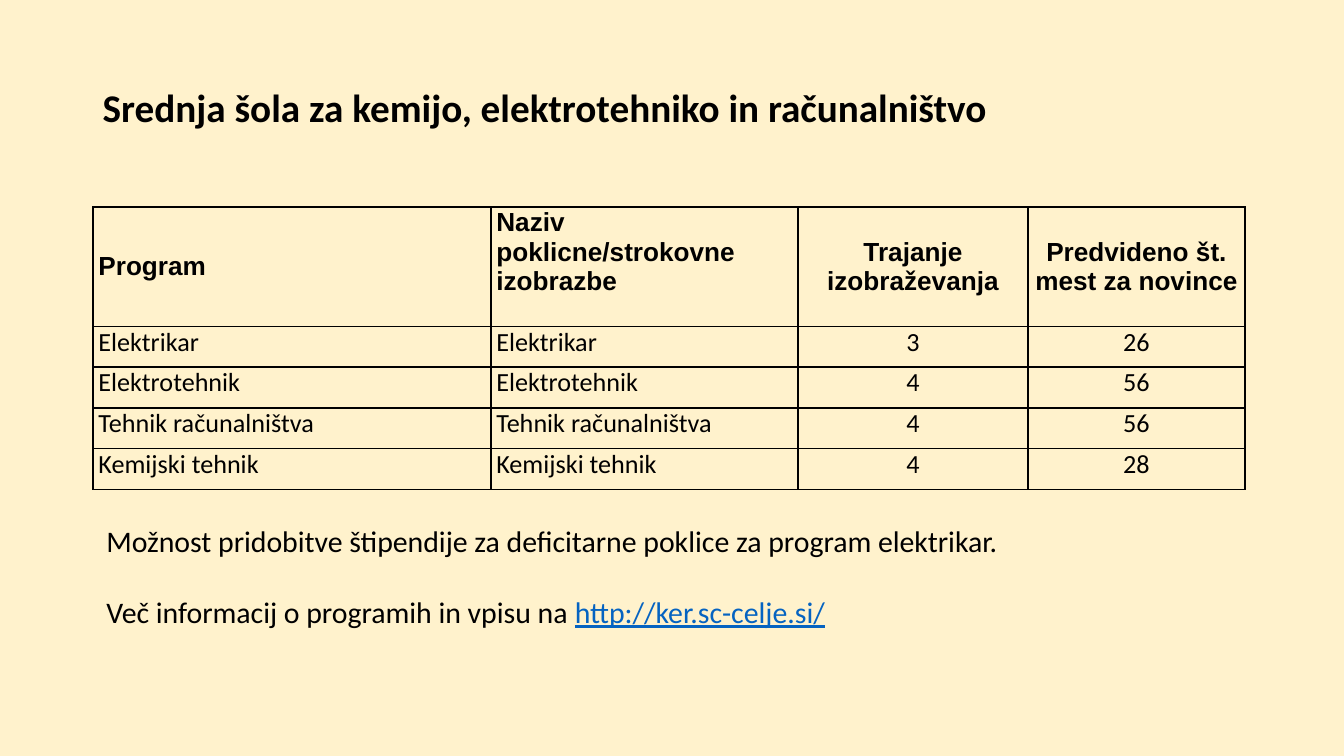
from pptx import Presentation
from pptx.dml.color import RGBColor as Rgb
from pptx.enum.text import MSO_ANCHOR as Anchor, MSO_AUTO_SIZE as Auto, PP_ALIGN as Align
from pptx.oxml import parse_xml
from pptx.oxml.ns import nsdecls
from pptx.util import Cm, Pt

COLORS = {"back": "FFF2CC", "text": "000000", "link": "0563C1"}
LEFT = 1.76
COLS = [7.52, 5.8, 4.35, 4.1]
HEAD, ROW = 2.26, 0.77
ROWS = [
    ["Program", "Naziv poklicne/strokovne izobrazbe",
     "Trajanje izobraževanja", "Predvideno št. mest za novince"],
    ["Elektrikar", "Elektrikar", "3", "26"],
    ["Elektrotehnik", "Elektrotehnik", "4", "56"],
    ["Tehnik računalništva", "Tehnik računalništva", "4", "56"],
    ["Kemijski tehnik", "Kemijski tehnik", "4", "28"],
]


def add_run(para, text, size, font="Calibri", bold=False, color="text"):
    run = para.add_run()
    run.text = text
    run.font.name = font
    run.font.size = Pt(size)
    run.font.bold = bold
    run.font.color.rgb = Rgb.from_string(COLORS[color])
    return run


def set_pads(item, side, top, bottom):
    item.margin_left = item.margin_right = Cm(side)
    item.margin_top, item.margin_bottom = Cm(top), Cm(bottom)


def place(shape, left, top, width, height, pads, anchor):
    shape.left, shape.top = Cm(left), Cm(top)
    shape.width, shape.height = Cm(width), Cm(height)
    frame = shape.text_frame
    frame.word_wrap = True
    frame.auto_size = Auto.NONE
    frame.vertical_anchor = anchor
    set_pads(frame, *pads)
    return frame


def add_title(slide):
    frame = place(slide.shapes.title, LEFT, 0.69, 21.9, 2.77,
                  (0.18, 0.1, 0.1), Anchor.MIDDLE)
    para = frame.paragraphs[0]
    para.alignment = Align.LEFT
    para.line_spacing = 0.9
    add_run(para, "Srednja šola za kemijo, elektrotehniko in računalništvo",
            21, bold=True)


def draw_edges(cell):
    props = cell._tc.get_or_add_tcPr()
    for spot, side in enumerate("LRTB"):
        props.insert(spot, parse_xml(
            f'<a:ln{side} {nsdecls("a")} w="12700"><a:solidFill>'
            f'<a:srgbClr val="{COLORS["text"]}"/></a:solidFill></a:ln{side}>'))


def fill_cell(cell, text, head, center):
    cell.fill.background()
    set_pads(cell, 0.1, 0, 0)
    cell.vertical_anchor = Anchor.MIDDLE if head else Anchor.TOP
    para = cell.text_frame.paragraphs[0]
    para.alignment = Align.CENTER if center else Align.LEFT
    add_run(para, text, 14, "Arial" if head else "Calibri", head)
    draw_edges(cell)


def add_grid(slide):
    high = HEAD + ROW * (len(ROWS) - 1)
    table = slide.shapes.add_table(len(ROWS), len(COLS), Cm(LEFT), Cm(3.91),
                                   Cm(sum(COLS)), Cm(high)).table
    table.first_row = table.horz_banding = False
    for col, width in zip(table.columns, COLS):
        col.width = Cm(width)
    for r, texts in enumerate(ROWS):
        table.rows[r].height = Cm(ROW if r else HEAD)
        for c, text in enumerate(texts):
            fill_cell(table.cell(r, c), text, r == 0, c > 1)
    table.cell(0, 1).margin_bottom = Cm(0.55)


def set_plain(para, gap):
    para.alignment = Align.LEFT
    para.space_before = Pt(gap)
    props = para._p.get_or_add_pPr()
    props.set("marL", "0")
    props.set("indent", "0")
    props.append(parse_xml(f'<a:buNone {nsdecls("a")}/>'))


def add_notice(slide):
    frame = place(slide.placeholders[1], LEFT, 9.63, 21.06, 8.33,
                  (0.25, 0.25, 0.25), Anchor.TOP)
    first, last = frame.paragraphs[0], frame.add_paragraph()
    set_plain(first, 0)
    set_plain(last, 19)
    add_run(first, "Možnost pridobitve štipendije za deficitarne "
                   "poklice za program elektrikar.", 16)
    add_run(last, "Več informacij o programih in vpisu na ", 16)
    link = add_run(last, "http://ker.sc-celje.si/", 16, color="link")
    link.font.underline = True


def main():
    deck = Presentation()
    deck.slide_width, deck.slide_height = Cm(25.4), Cm(14.29)
    slide = deck.slides.add_slide(deck.slide_layouts[1])
    back = slide.background.fill
    back.solid()
    back.fore_color.rgb = Rgb.from_string(COLORS["back"])
    add_title(slide)
    add_grid(slide)
    add_notice(slide)
    deck.save("out.pptx")


if __name__ == "__main__":
    main()
